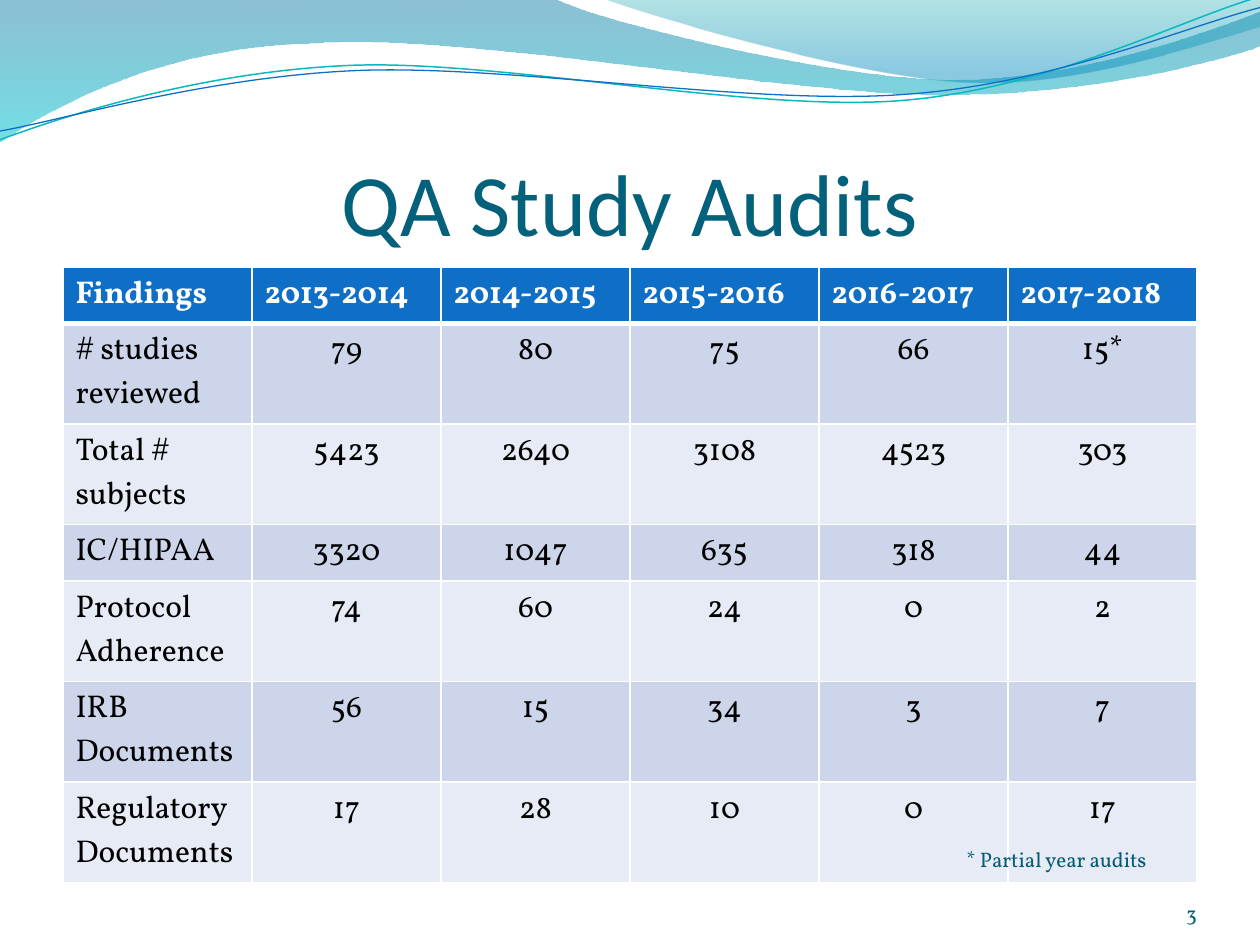
import math
from dataclasses import dataclass
from typing import Optional

import pptx
import pptx.dml.color
import pptx.enum.text
import pptx.oxml
import pptx.oxml.ns
import pptx.util

# The slide is a grid of 10 columns by 7.5 rows; all lengths are in cells
COLS, ROWS = 10, 7.5
CELL = pptx.util.Inches(1)
NS = pptx.oxml.ns.nsdecls("a")

COLORS = {
    "title": "04617B", "note": "045D75", "header": "0F6FC6",
    "band_dark": "CCD5EA", "band_light": "E7EBF5",
    "white": "FFFFFF", "black": "000000",
    "deep": "0074A1", "aqua": "00C6CF", "teal": "00A1A9", "sky": "008BBF",
    "line_teal": "0AB8BF", "line_blue": "0F6FC6",
}
BODY_FONT = "Vollkorn"
ALIGN = pptx.enum.text.PP_ALIGN
BOTTOM = pptx.enum.text.MSO_ANCHOR.BOTTOM


@dataclass
class Stop:
    position: float
    color: str
    opacity: int


@dataclass
class Wave:
    """Segments of two numbers are straight, of six numbers are Bezier curves."""
    box: tuple[float, float, float, float]
    start: tuple[float, float]
    segments: list[tuple[float, ...]]
    stops: tuple[Stop, ...] = ()
    line: Optional[str] = None
    weight: float = 0
    rotation: float = 0


WAVES = [
    Wave((-0.01, -0.01, 10.02, 1.14), (0, 0), [
        (4.4, -0.01), (4.76, 0.17, 6.64, 0.63, 7.58, 0.63),
        (8.53, 0.63, 9.58, 0.26, 10, 0.09), (10.01, 0.36),
        (9.83, 0.44, 8.7, 0.76, 7.46, 0.75), (6.22, 0.75, 3.82, 0.28, 2.57, 0.34),
        (1.29, 0.36, 0.46, 0.83, -0.01, 1.13), (0, 0)],
        stops=(Stop(0, "deep", 45), Stop(1, "aqua", 55))),
    Wave((4.79, -0.01, 5.21, 0.7), (4.79, -0.01), [
        (5.09, 0.11, 6.82, 0.62, 7.69, 0.65), (8.56, 0.69, 9.61, 0.32, 10, 0.21),
        (10, 0), (4.79, -0.01)],
        stops=(Stop(0, "teal", 30), Stop(0.8, "sky", 45))),
    Wave((-0.02, 0.22, 10.02, 0.71), (0, 1.11), [
        (0.48, 0.93, 1.58, 0.57, 2.77, 0.52), (3.95, 0.47, 5.93, 0.89, 7.13, 0.8),
        (8.33, 0.71, 9.38, 0.15, 9.98, -0.02)],
        line="line_teal", weight=0.85, rotation=357.3),
    Wave((-0.02, 0.3, 10.03, 0.58), (0, 1.04), [
        (0.47, 0.96, 1.64, 0.61, 2.83, 0.56), (4.03, 0.51, 5.97, 0.84, 7.17, 0.75),
        (8.36, 0.67, 9.41, 0.21, 10, 0.06)],
        line="line_blue", weight=0.75, rotation=357.3),
]

AUDITS = [
    ("Findings", "2013-2014", "2014-2015", "2015-2016", "2016-2017", "2017-2018"),
    ("# studies reviewed", "79", "80", "75", "66", "15*"),
    ("Total # subjects", "5423", "2640", "3108", "4523", "303"),
    ("IC/HIPAA", "3320", "1047", "635", "318", "44"),
    ("Protocol Adherence", "74", "60", "24", "0", "2"),
    ("IRB Documents", "56", "15", "34", "3", "7"),
    ("Regulatory Documents", "17", "28", "10", "0", "17"),
]
COL_WIDTH, ROW_HEIGHT = 1.5, 0.41


def cells(n: float) -> int:
    return round(n * CELL)


def rgb(name: str) -> pptx.dml.color.RGBColor:
    return pptx.dml.color.RGBColor.from_string(COLORS[name])


def write(tf, text: str, *, size: float, color: str, font: str = BODY_FONT,
          bold: bool = False, align=ALIGN.LEFT) -> None:
    p = tf.paragraphs[0]
    p.alignment = align
    r = p.add_run()
    r.text = text
    r.font.name, r.font.size, r.font.bold = font, pptx.util.Pt(size), bold
    r.font.color.rgb = rgb(color)


def anchor_bottom(tf, top_inset: float = 0) -> None:
    tf.word_wrap = True
    tf.vertical_anchor = BOTTOM
    tf.margin_left = tf.margin_right = tf.margin_bottom = 0
    tf.margin_top = cells(top_inset)


def path_point(wave: Wave, x: float, y: float) -> str:
    """Place a slide point in the wave's box, before the box is rotated."""
    left, top, w, h = wave.box
    dx, dy = x - left - w / 2, y - top - h / 2
    turn = math.radians(-wave.rotation)
    px = w / 2 + dx * math.cos(turn) - dy * math.sin(turn)
    py = h / 2 + dx * math.sin(turn) + dy * math.cos(turn)
    return f'<a:pt x="{cells(px)}" y="{cells(py)}"/>'


def bend_outline(sp, wave: Wave) -> None:
    """Turn the straight segments of the freeform into Bezier curves."""
    path = next(sp._element.spPr.iter(pptx.oxml.ns.qn("a:path")))
    path.set("w", str(cells(wave.box[2])))
    path.set("h", str(cells(wave.box[3])))
    steps = [step for step in path if not step.tag.endswith("close")]
    for step, seg in zip(steps, [wave.start, *wave.segments]):
        tag = ("moveTo" if step is steps[0] else
               "cubicBezTo" if len(seg) == 6 else "lnTo")
        points = "".join(path_point(wave, x, y) for x, y in zip(seg[::2], seg[1::2]))
        path.replace(step, pptx.oxml.parse_xml(f"<a:{tag} {NS}>{points}</a:{tag}>"))


def draw_wave(s, wave: Wave) -> None:
    fb = s.shapes.build_freeform(*map(cells, wave.start))
    ends = [tuple(map(cells, seg[-2:])) for seg in wave.segments]
    fb.add_line_segments(ends, close=bool(wave.stops))
    sp = fb.convert_to_shape()
    sp.left, sp.top, sp.width, sp.height = map(cells, wave.box)
    sp.rotation = wave.rotation
    bend_outline(sp, wave)
    sp.shadow.inherit = False
    if wave.line:
        sp.fill.background()
        sp.line.color.rgb = rgb(wave.line)
        sp.line.width = pptx.util.Pt(wave.weight)
        return
    sp.line.fill.background()
    sp.fill.gradient()
    sp.fill.gradient_angle = 270
    for gs, stop in zip(sp.fill.gradient_stops, wave.stops):
        gs.position, gs.color.rgb = stop.position, rgb(stop.color)
    # Opacity of each gradient stop
    colors = sp._element.spPr.iter(pptx.oxml.ns.qn("a:srgbClr"))
    for clr, stop in zip(colors, wave.stops):
        clr.append(pptx.oxml.parse_xml(f'<a:alpha {NS} val="{stop.opacity * 1000}"/>'))


def set_borders(cell, **weights: float) -> None:
    for side in "LRTB":
        width = pptx.util.Pt(weights.get(side, 1))
        cell._tc.get_or_add_tcPr().append(pptx.oxml.parse_xml(
            f'<a:ln{side} {NS} w="{width}"><a:solidFill>'
            f'<a:srgbClr val="{COLORS["white"]}"/></a:solidFill></a:ln{side}>'))


def draw_table(s, left: float, top: float) -> None:
    n_rows, n_cols = len(AUDITS), len(AUDITS[0])
    table = s.shapes.add_table(
        n_rows, n_cols, cells(left), cells(top),
        cells(COL_WIDTH * n_cols), cells(ROW_HEIGHT * n_rows)).table
    for i, row in enumerate(AUDITS):
        header = i == 0
        fill = "header" if header else "band_dark" if i % 2 else "band_light"
        edges = {0: {"B": 3}, 1: {"T": 3}}.get(i, {})
        for j, text in enumerate(row):
            cell = table.cell(i, j)
            set_borders(cell, **edges)
            cell.fill.solid()
            cell.fill.fore_color.rgb = rgb(fill)
            write(cell.text_frame, text, size=18, bold=header,
                  color="white" if header else "black",
                  align=ALIGN.LEFT if header or j == 0 else ALIGN.CENTER)


def draw_note(s, text: str, box: tuple[float, ...], align=ALIGN.LEFT) -> None:
    sp = s.shapes.add_textbox(*map(cells, box))
    anchor_bottom(sp.text_frame)
    write(sp.text_frame, text, size=12, color="note", align=align)


def main() -> None:
    prs = pptx.Presentation()
    prs.slide_width, prs.slide_height = cells(COLS), cells(ROWS)
    s = prs.slides.add_slide(prs.slide_layouts[5])

    # Wave header
    for wave in WAVES:
        draw_wave(s, wave)
    # Title
    title = s.shapes.title
    title.left, title.top, title.width, title.height = map(cells, (0.5, 0.77, 9, 1.25))
    anchor_bottom(title.text_frame, top_inset=0.05)
    write(title.text_frame, "QA Study Audits", size=50, color="title",
          font="Calibri", align=ALIGN.CENTER)
    # Audit findings, footnote and slide number
    draw_table(s, 0.5, 2.12)
    draw_note(s, "* Partial year audits", (7.67, 6.67, 1.83, 0.25))
    draw_note(s, "3", (8.67, 6.95, 0.83, 0.4), align=ALIGN.RIGHT)
    prs.save("out.pptx")


if __name__ == "__main__":
    main()
